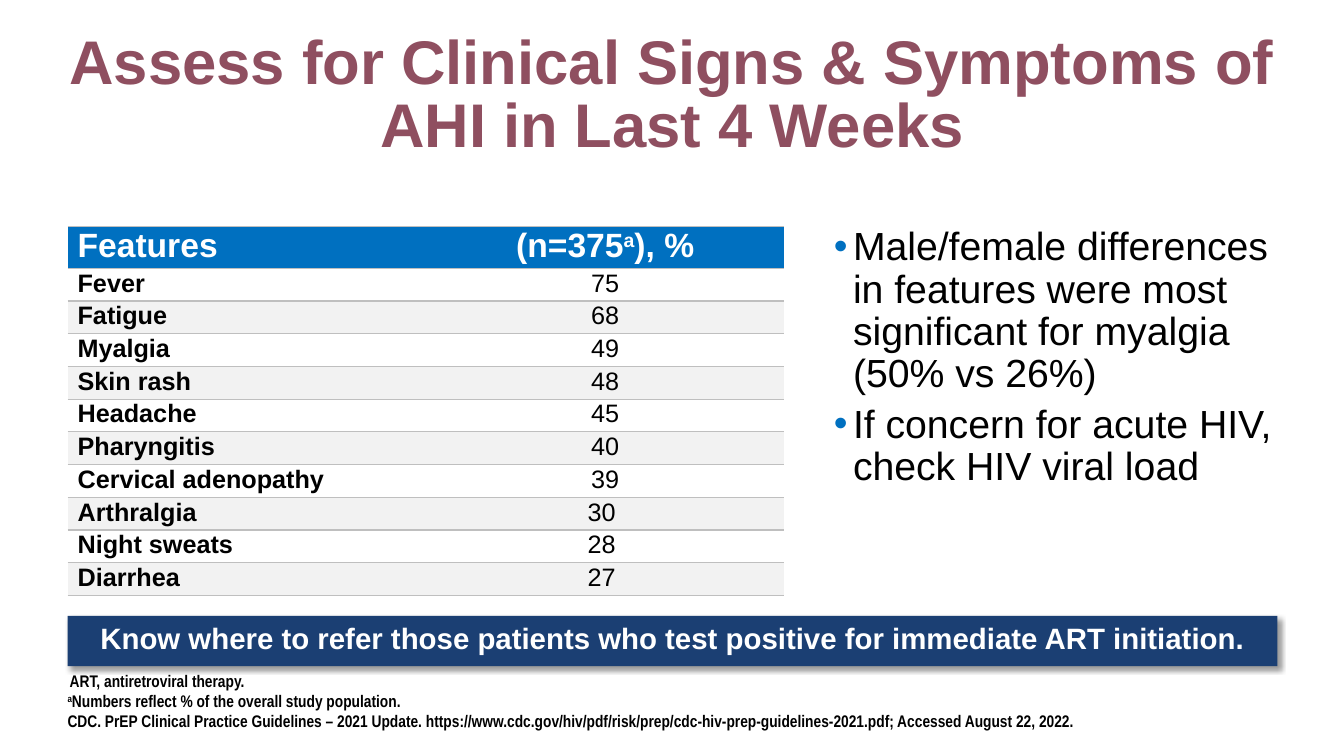
from dataclasses import dataclass
from typing import Optional

from lxml.etree import SubElement
from pptx import Presentation
from pptx.dml.color import RGBColor
from pptx.enum.shapes import MSO_SHAPE
from pptx.enum.text import MSO_ANCHOR as Anchor, MSO_AUTO_SIZE as AutoSize, PP_ALIGN as Align
from pptx.oxml.ns import qn
from pptx.util import Inches, Pt


@dataclass(frozen=True)
class Theme:
    font: str = "Arial"
    note_font: str = "Arial Narrow"
    title: str = "8F4F60"
    accent: str = "0070C0"
    banner: str = "1B3F73"
    band: str = "F2F2F2"
    rule: str = "BFBFBF"
    black: str = "000000"
    white: str = "FFFFFF"
    title_size: int = 44
    body_size: int = 28
    header_size: int = 24
    banner_size: int = 21
    cell_size: int = 18
    note_size: int = 12


@dataclass(frozen=True)
class Feature:
    name: str
    percent: str


THEME = Theme()
LEFT, FULL_WIDTH, CONTENT_TOP = 0.67, 12, 2.25
TABLE_WIDTH, HEADER_HEIGHT, ROW_HEIGHT = 7.11, 0.38, 0.31

HEADER = Feature("Features", "(n=375^a^), %")
FEATURES = [
    Feature("Fever", "75"),
    Feature("Fatigue", "68"),
    Feature("Myalgia", "49"),
    Feature("Skin rash", "48"),
    Feature("Headache", "45"),
    Feature("Pharyngitis", "40"),
    Feature("Cervical adenopathy", "39"),
    Feature("Arthralgia", "30 "),
    Feature("Night sweats", "28 "),
    Feature("Diarrhea", "27 "),
]
POINTS = [
    "Male/female differences in features were most significant for myalgia (50% vs 26%)",
    "If concern for acute HIV, check HIV viral load",
]
NOTES = [
    "^ ^ART, antiretroviral therapy.",
    "^a^Numbers reflect % of the overall study population.",
    "CDC. PrEP Clinical Practice Guidelines – 2021 Update. "
    "https://www.cdc.gov/hiv/pdf/risk/prep/cdc-hiv-prep-guidelines-2021.pdf; "
    "Accessed August 22, 2022.",
]


def write(p, text: str, *, size: int, color: str = THEME.black, bold: bool = False,
          font: str = THEME.font, align: Align = Align.LEFT,
          spacing: Optional[float] = None, before: float = 0) -> None:
    """Fill a paragraph; text between two carets is superscript."""
    p.alignment = align
    p.space_before = Pt(before)
    if spacing:
        p.line_spacing = spacing
    for i, part in enumerate(text.split("^")):
        if not part:
            continue
        r = p.add_run()
        r.text = part
        r.font.name, r.font.size, r.font.bold = font, Pt(size), bold
        r.font.color.rgb = RGBColor.from_string(color)
        if i % 2:
            r.font._element.set("baseline", "30000")


def set_frame(sp, box: tuple, insets: tuple, anchor: Anchor = Anchor.TOP):
    """Place a shape and return its text frame; insets run left, top, right, bottom."""
    sp.left, sp.top, sp.width, sp.height = map(Inches, box)
    tf = sp.text_frame
    tf.word_wrap, tf.auto_size, tf.vertical_anchor = True, AutoSize.SHAPE_TO_FIT_TEXT, anchor
    tf.margin_left, tf.margin_top, tf.margin_right, tf.margin_bottom = map(Inches, insets)
    return tf


def paragraph(tf, index: int):
    return tf.add_paragraph() if index else tf.paragraphs[0]


def add_bullet(p, color: str, indent: float) -> None:
    pPr = p._p.get_or_add_pPr()
    pPr.set("marL", str(Inches(indent)))
    pPr.set("indent", str(-Inches(indent)))
    SubElement(SubElement(pPr, qn("a:buClr")), qn("a:srgbClr"), val=color)
    SubElement(pPr, qn("a:buFont"), typeface=THEME.font)
    SubElement(pPr, qn("a:buChar"), char="•")


def set_borders(cell) -> None:
    """Rule above and below the cell, nothing at its sides."""
    tcPr = cell._tc.get_or_add_tcPr()
    for side in ("L", "R"):
        SubElement(SubElement(tcPr, qn(f"a:ln{side}"), w="0"), qn("a:noFill"))
    for side in ("T", "B"):
        line = SubElement(tcPr, qn(f"a:ln{side}"), w=str(Pt(1)))
        SubElement(SubElement(line, qn("a:solidFill")), qn("a:srgbClr"), val=THEME.rule)


def add_shadow(sp) -> None:
    sp.shadow.inherit = False
    effects = sp._element.spPr.find(qn("a:effectLst"))
    shadow = SubElement(effects, qn("a:outerShdw"), blurRad=str(Pt(4)), dist=str(Pt(3)),
                        dir=str(45 * 60000), algn="tl", rotWithShape="0")
    color = SubElement(shadow, qn("a:srgbClr"), val=THEME.black)
    SubElement(color, qn("a:alpha"), val="40000")


def add_feature_table(s) -> None:
    rows = [HEADER, *FEATURES]
    height = HEADER_HEIGHT + ROW_HEIGHT * len(FEATURES)
    table = s.shapes.add_table(len(rows), 2, Inches(LEFT), Inches(CONTENT_TOP),
                               Inches(TABLE_WIDTH), Inches(height)).table
    table.horz_banding = False
    for i, feature in enumerate(rows):
        is_header = i == 0
        table.rows[i].height = Inches(HEADER_HEIGHT if is_header else ROW_HEIGHT)
        for j, text in enumerate((feature.name, feature.percent)):
            cell = table.cell(i, j)
            cell.vertical_anchor = Anchor.MIDDLE
            cell.margin_left = cell.margin_right = Inches(0.1)
            cell.margin_top = cell.margin_bottom = Inches(0.03)
            set_borders(cell)
            if is_header or i % 2 == 0:
                cell.fill.solid()
                cell.fill.fore_color.rgb = RGBColor.from_string(
                    THEME.accent if is_header else THEME.band)
            else:
                cell.fill.background()
            write(cell.text_frame.paragraphs[0], text,
                  size=THEME.header_size if is_header else THEME.cell_size,
                  color=THEME.white if is_header else THEME.black,
                  bold=is_header or j == 0, spacing=0.88,
                  align=Align.CENTER if j else Align.LEFT)


def add_banner(s) -> None:
    sp = s.shapes.add_shape(MSO_SHAPE.RECTANGLE, 0, 0, 0, 0)
    tf = set_frame(sp, (LEFT, 6.11, FULL_WIDTH, 0.5), (0.1, 0.1, 0.1, 0.1))
    sp.fill.solid()
    sp.fill.fore_color.rgb = RGBColor.from_string(THEME.banner)
    sp.line.fill.background()
    add_shadow(sp)
    write(tf.paragraphs[0],
          "Know where to refer those patients who test positive for immediate ART initiation.",
          size=THEME.banner_size, color=THEME.white, bold=True, align=Align.CENTER, spacing=0.85)


def main() -> None:
    prs = Presentation()
    prs.slide_width, prs.slide_height = Inches(13.33), Inches(7.5)
    s = prs.slides.add_slide(prs.slide_layouts[1])

    tf = set_frame(s.shapes.title, (LEFT, 0.29, FULL_WIDTH, 1.36), (0, 0.05, 0, 0.05))
    write(tf.paragraphs[0], "Assess for Clinical Signs & Symptoms of AHI in Last 4 Weeks",
          size=THEME.title_size, color=THEME.title, bold=True, align=Align.CENTER, spacing=0.85)

    tf = set_frame(s.placeholders[1], (8.27, CONTENT_TOP, 4.4, 2.07), (0, 0, 0, 0.1))
    for i, point in enumerate(POINTS):
        p = paragraph(tf, i)
        add_bullet(p, THEME.accent, 0.19)
        write(p, point, size=THEME.body_size, spacing=0.9, before=6 if i else 0)

    add_feature_table(s)
    add_banner(s)

    notes = s.shapes.add_textbox(0, 0, 0, 0)
    tf = set_frame(notes, (LEFT, 6.64, FULL_WIDTH, 0.61), (0, 0, 0, 0), Anchor.BOTTOM)
    for i, note in enumerate(NOTES):
        write(paragraph(tf, i), note, size=THEME.note_size, bold=True, font=THEME.note_font)

    prs.save("out.pptx")


if __name__ == "__main__":
    main()
